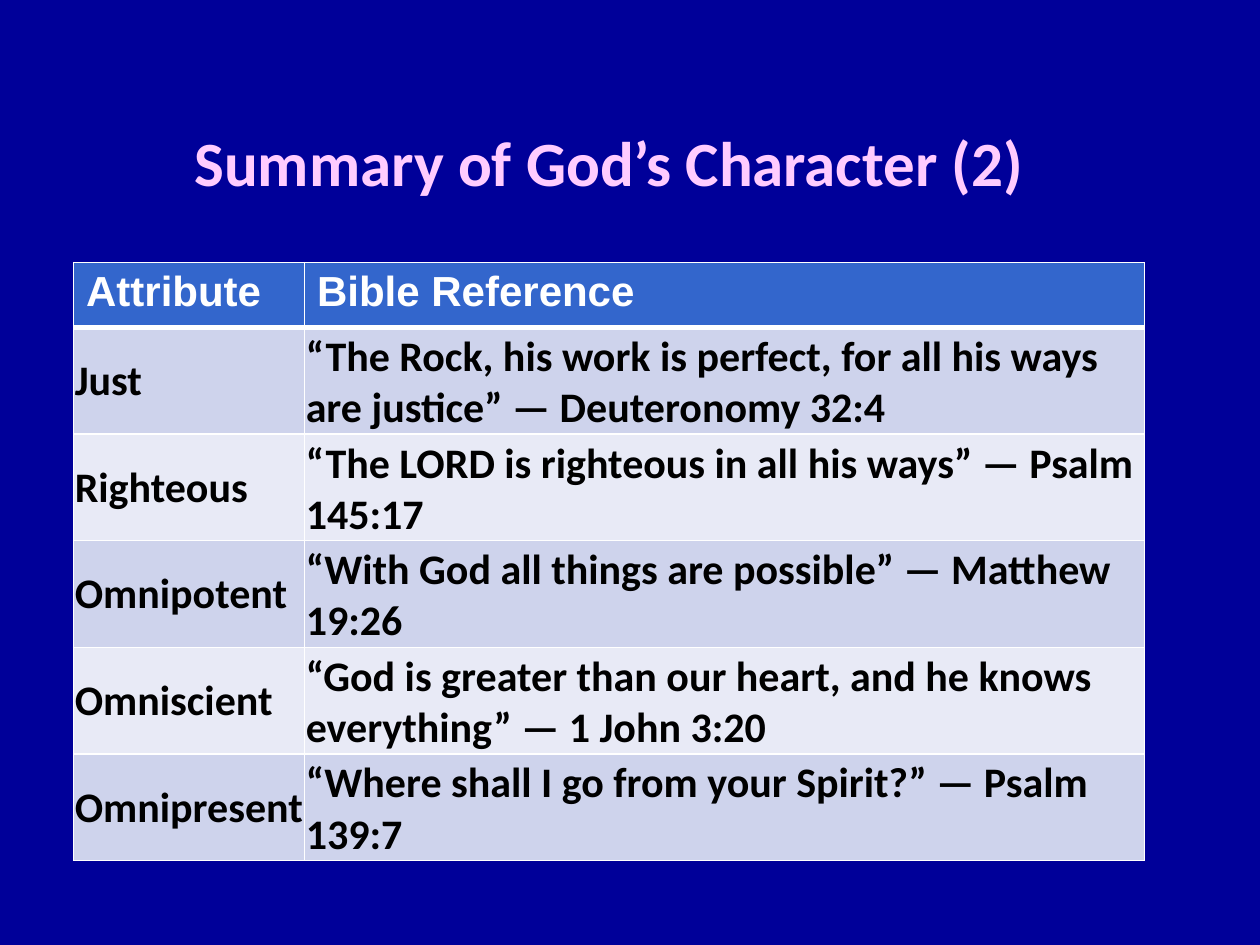
from dataclasses import dataclass
from lxml.etree import SubElement
from pptx import Presentation
from pptx.dml.color import RGBColor
from pptx.enum.text import MSO_ANCHOR, PP_ALIGN
from pptx.oxml.ns import qn
from pptx.slide import Slide
from pptx.util import Pt

COLORS = {"back": "000099", "title": "FFCCFF", "head": "3366CC", "odd": "CED3EC",
          "even": "E8EAF6", "white": "FFFFFF", "black": "000000"}
HEADS = ("Attribute", "Bible Reference")
VERSES = [
    ("Just", "“The Rock, his work is perfect, for all his ways are justice” — Deuteronomy 32:4"),
    ("Righteous", "“The LORD is righteous in all his ways” — Psalm 145:17"),
    ("Omnipotent", "“With God all things are possible” — Matthew 19:26"),
    ("Omniscient", "“God is greater than our heart, and he knows everything” — 1 John 3:20"),
    ("Omnipresent", "“Where shall I go from your Spirit?” — Psalm 139:7"),
]


def color(name):
    return RGBColor.from_string(COLORS[name])


@dataclass
class Deck:
    """Style and current slide, with a method for each kind of element."""
    slide: Slide
    face: str = "Calibri"
    size: float = 24

    def back(self, name):
        fill = self.slide.background.fill
        fill.solid()
        fill.fore_color.rgb = color(name)

    def font(self, para, name, size=None, face=None):
        font = para.font
        font.name, font.size = face or self.face, Pt(size or self.size)
        font.bold, font.color.rgb = True, color(name)

    def title(self, text, left, top, width, height):
        shape = self.slide.shapes.title
        shape.left, shape.top = Pt(left), Pt(top)
        shape.width, shape.height = Pt(width), Pt(height)
        frame = shape.text_frame
        frame.text = text
        frame.vertical_anchor = MSO_ANCHOR.MIDDLE
        para = frame.paragraphs[0]
        para.alignment = PP_ALIGN.CENTER
        self.font(para, "title", 36)

    def border(self, cell, base):
        props = cell._tc.get_or_add_tcPr()
        for side, width in zip("LRTB", (1, 1, 1, base)):
            line = SubElement(props, qn(f"a:ln{side}"), w=str(Pt(width)))
            fill = SubElement(line, qn("a:solidFill"))
            SubElement(fill, qn("a:srgbClr"), val=COLORS["white"])

    def cell(self, cell, text, fill, ink, face=None, base=1):
        self.border(cell, base)
        cell.fill.solid()
        cell.fill.fore_color.rgb = color(fill)
        cell.text = text
        self.font(cell.text_frame.paragraphs[0], ink, face=face)

    def table(self, heads, rows, left, top, widths, high, tall):
        height = high + tall * len(rows)
        table = self.slide.shapes.add_table(
            len(rows) + 1, len(heads), Pt(left), Pt(top), Pt(sum(widths)), Pt(height)).table
        for col, width in zip(table.columns, widths):
            col.width = Pt(width)
        table.rows[0].height = Pt(high)
        for c, text in enumerate(heads):
            self.cell(table.cell(0, c), text, "head", "white", "Arial", 3)
        for r, row in enumerate(rows, 1):
            table.rows[r].height = Pt(tall)
            for c, text in enumerate(row):
                cell = table.cell(r, c)
                self.cell(cell, text, "odd" if r % 2 else "even", "black")
                cell.margin_left = cell.margin_right = cell.margin_top = Pt(0.75)
                cell.margin_bottom = Pt(0)
                cell.vertical_anchor = MSO_ANCHOR.BOTTOM if c else MSO_ANCHOR.MIDDLE


def main():
    show = Presentation()
    show.slide_width, show.slide_height = Pt(720), Pt(540)
    deck = Deck(show.slides.add_slide(show.slide_layouts[5]))
    deck.back("back")
    deck.title("Summary of God’s Character (2)", 42, 48, 612, 88)
    deck.table(HEADS, VERSES, 42, 150, (132, 480), 37.2, 60.9)
    show.save("out.pptx")


if __name__ == "__main__":
    main()
